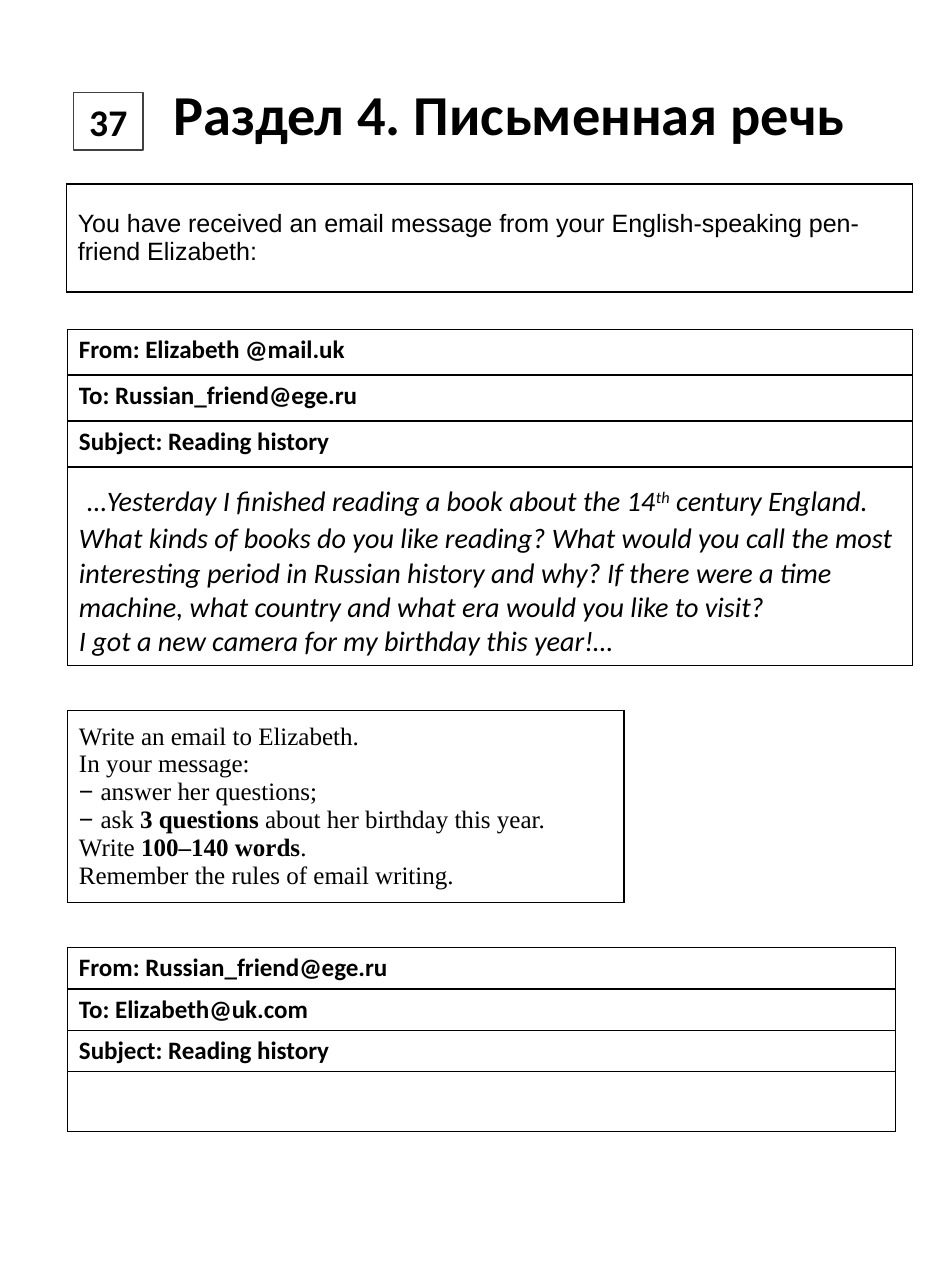
from lxml.etree import SubElement
from pptx import Presentation
from pptx.dml.color import RGBColor
from pptx.enum.shapes import MSO_SHAPE
from pptx.enum.text import MSO_ANCHOR, MSO_AUTO_SIZE, PP_ALIGN
from pptx.oxml.ns import qn
from pptx.util import Pt

BLACK, WHITE, GRAY = "000000", "FFFFFF", "404040"
LEFT = 43.2


def color(value):
    return RGBColor.from_string(value)


def add_text(paragraph, text, font="Calibri", size=16, bold=False, italic=False, raised=0):
    """Add runs to a paragraph, with a line break at each newline."""
    for index, line in enumerate(text.split("\n")):
        if index:
            paragraph.add_line_break()
        if not line:
            continue
        run = paragraph.add_run()
        run.text = line
        run.font.name = font
        run.font.size = Pt(size)
        run.font.bold = bold
        run.font.italic = italic
        run.font.color.rgb = color(BLACK)
        if raised:
            run._r.get_or_add_rPr().set("baseline", str(raised * 1000))


class Worksheet:
    """Holds the current slide and the style of its elements."""

    line_width = 1

    def __init__(self, slide):
        self.slide = slide

    def number_box(self, text, left, top, width, height):
        shape = self.slide.shapes.add_shape(
            MSO_SHAPE.RECTANGLE, Pt(left), Pt(top), Pt(width), Pt(height))
        shape.shadow.inherit = False
        shape.fill.solid()
        shape.fill.fore_color.rgb = color(WHITE)
        shape.line.color.rgb = color(GRAY)
        shape.line.width = Pt(self.line_width)
        shape.text_frame.vertical_anchor = MSO_ANCHOR.MIDDLE
        paragraph = shape.text_frame.paragraphs[0]
        paragraph.alignment = PP_ALIGN.CENTER
        add_text(paragraph, text, size=24, bold=True)

    def heading(self, text, left, top, width, height):
        shape = self.slide.shapes.add_textbox(Pt(left), Pt(top), Pt(width), Pt(height))
        shape.text_frame.word_wrap = False
        shape.text_frame.auto_size = MSO_AUTO_SIZE.SHAPE_TO_FIT_TEXT
        paragraph = shape.text_frame.paragraphs[0]
        paragraph.alignment = PP_ALIGN.CENTER
        add_text(paragraph, text, size=36, bold=True)

    def table(self, left, top, width, row_heights):
        """Add a one-column table with black borders; return its cells."""
        table = self.slide.shapes.add_table(
            len(row_heights), 1, Pt(left), Pt(top), Pt(width), Pt(sum(row_heights))).table
        table.first_row = table.horz_banding = False
        for row, height in zip(table.rows, row_heights):
            row.height = Pt(height)
            self.border(row.cells[0])
            row.cells[0].fill.background()
        return [row.cells[0] for row in table.rows]

    def border(self, cell):
        properties = cell._tc.get_or_add_tcPr()
        for side in ("a:lnL", "a:lnR", "a:lnT", "a:lnB"):
            line = SubElement(properties, qn(side), w=str(Pt(self.line_width)))
            fill = SubElement(line, qn("a:solidFill"))
            SubElement(fill, qn("a:srgbClr"), val=BLACK)

    def note(self, parts, left, top, width, height, font):
        """Add a single framed cell; parts are (text, format) pairs."""
        cell, = self.table(left, top, width, [height])
        cell.vertical_anchor = MSO_ANCHOR.MIDDLE
        for text, style in parts:
            add_text(cell.text_frame.paragraphs[0], text, **{"font": font, **style})

    def email(self, headers, top, width, header_height, body_height):
        """Add an email form; return the cell for its body."""
        heights = [header_height] * len(headers) + [body_height]
        *header_cells, body = self.table(LEFT, top, width, heights)
        for cell, header in zip(header_cells, headers):
            add_text(cell.text_frame.paragraphs[0], header, bold=True)
        return body


def main():
    presentation = Presentation()
    presentation.slide_width = Pt(595.44)
    presentation.slide_height = Pt(822.24)
    worksheet = Worksheet(presentation.slides.add_slide(presentation.slide_layouts[6]))

    # Task number and section title
    worksheet.number_box("37", 46.8, 59, 44.6, 36.7)
    worksheet.heading("Раздел 4. Письменная речь", 101.5, 46.8, 447.1, 51.1)

    # Introduction
    introduction = ("You have received an email message from your "
                    "English-speaking pen-friend Elizabeth:")
    worksheet.note([(introduction, {})], 42.5, 117.4, 540, 69.1, "Arial")

    # Received email
    body = worksheet.email(
        ["From: Elizabeth @mail.uk", "To: Russian_friend@ege.ru", "Subject: Reading history"],
        210.2, 539.3, 29.3, 126.7)
    body.vertical_anchor = MSO_ANCHOR.MIDDLE
    body.margin_top = body.margin_bottom = Pt(5.76)
    letter = body.text_frame.paragraphs[0]
    add_text(letter, " ", size=24)
    for text, raised in (
            ("…Yesterday I finished reading a book about the 14", 0),
            ("th", 30),
            (" century England. What kinds of books do you like reading? "
             "What would you call the most interesting period in Russian history and why? "
             "If there were a time machine, what country and what era would you like to visit?", 0)):
        add_text(letter, text, size=18, italic=True, raised=raised)
    add_text(body.text_frame.add_paragraph(),
             "I got a new camera for my birthday this year!…", size=18, italic=True)

    # Instructions
    dash = ("− ", {"font": "Arial"})
    worksheet.note([
        ("Write an email to Elizabeth.\nIn your message:\n", {}),
        dash, ("answer her questions;\n", {}),
        dash, ("ask ", {}), ("3 questions ", {"bold": True}),
        ("about her birthday this year.\nWrite ", {}),
        ("100–140 words", {"bold": True}),
        (".\nRemember the rules of email writing.", {}),
    ], LEFT, 453.6, 355, 122.4, "Times New Roman")

    # Reply form
    worksheet.email(
        ["From: Russian_friend@ege.ru", "To: Elizabeth@uk.com", "Subject: Reading history"],
        604.8, 528.5, 26.5, 38.2)

    presentation.save("out.pptx")


if __name__ == "__main__":
    main()
